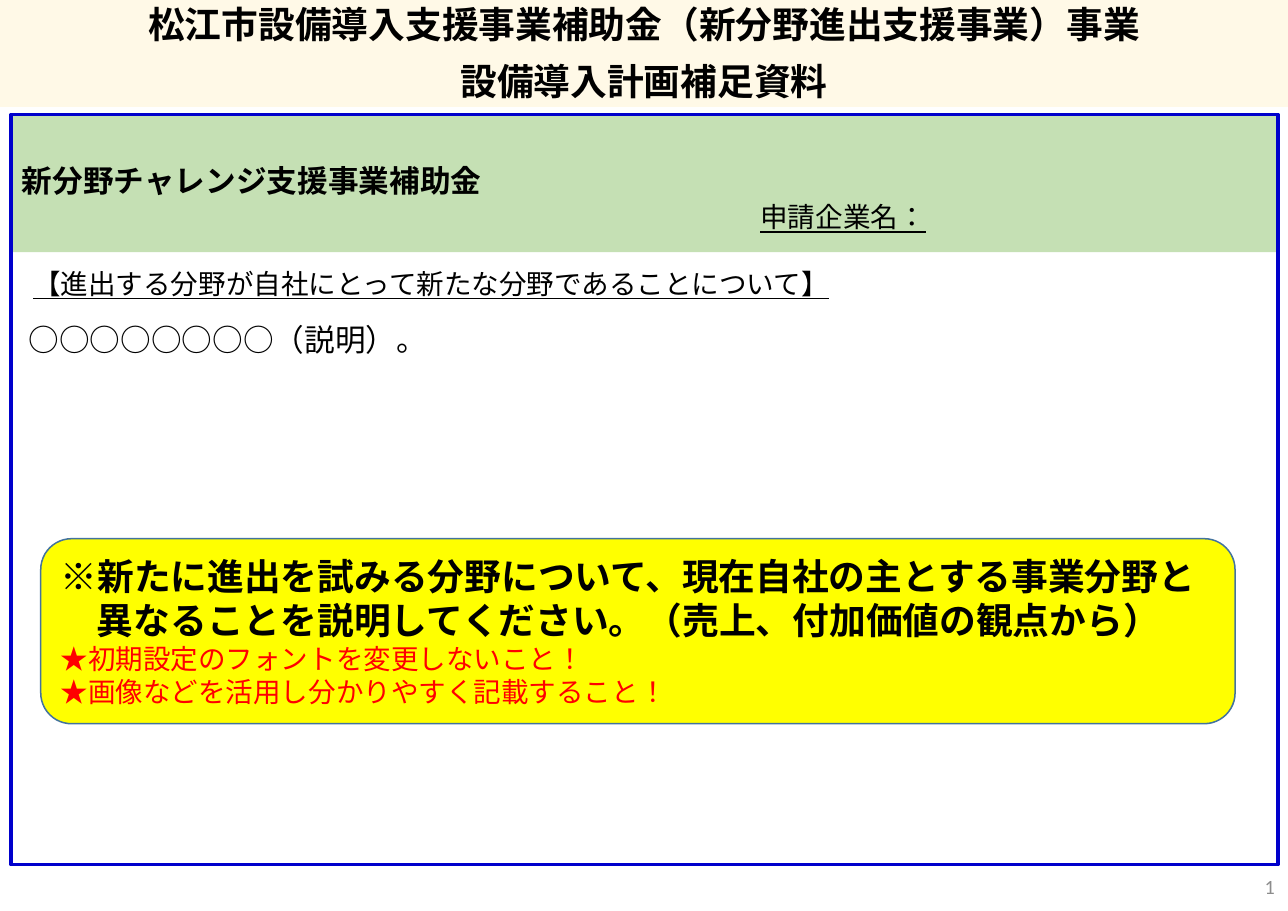
from pptx import Presentation
from pptx.dml.color import RGBColor
from pptx.enum.lang import MSO_LANGUAGE_ID
from pptx.enum.shapes import MSO_SHAPE
from pptx.enum.text import MSO_ANCHOR, PP_ALIGN
from pptx.oxml.ns import qn
from pptx.util import Inches, Pt

RECT, ROUNDED = MSO_SHAPE.RECTANGLE, MSO_SHAPE.ROUNDED_RECTANGLE
TOP, MIDDLE = MSO_ANCHOR.TOP, MSO_ANCHOR.MIDDLE
LEFT, CENTER, RIGHT = PP_ALIGN.LEFT, PP_ALIGN.CENTER, PP_ALIGN.RIGHT
JAPANESE = MSO_LANGUAGE_ID.JAPANESE

BLACK = RGBColor(0x00, 0x00, 0x00)
RED = RGBColor(0xFF, 0x00, 0x00)
GRAY = RGBColor(0x8C, 0x8C, 0x8C)
CREAM = RGBColor(0xFF, 0xF9, 0xE7)
GREEN = RGBColor(0xC5, 0xE0, 0xB4)
YELLOW = RGBColor(0xFF, 0xFF, 0x00)
FRAME_BLUE = RGBColor(0x00, 0x00, 0xCC)
NOTE_BLUE = RGBColor(0x43, 0x73, 0x9E)

GOTHIC, LATIN, BAND_FONT = "Noto Sans CJK JP", "Calibri", "Arial"
TITLE_SIZE, BODY_SIZE, LABEL_SIZE, NUMBER_SIZE = 24, 20, 18, 13.2
PAGE_WIDTH, PAGE_HEIGHT = 11.69, 8.27
FRAME_LEFT, FRAME_WIDTH = 0.1, 11.5
LABEL_HEIGHT = 0.4
ONE_CHARACTER = round(TITLE_SIZE / 72, 2)

TITLE_LINES = [
    "松江市設備導入支援事業補助金（新分野進出支援事業）事業",
    "設備導入計画補足資料",
]
# Each guidance line with its indent in characters
REQUEST_LINES = [
    ("※新たに進出を試みる分野について、現在自社の主とする事業分野と", 0),
    ("異なることを説明してください。（売上、付加価値の観点から）", 1),
]
REMINDERS = [
    "★初期設定のフォントを変更しないこと！",
    "★画像などを活用し分かりやすく記載すること！",
]
UNDERLINED_LABELS = [
    ("【進出する分野が自社にとって新たな分野であることについて】", 0.1, 2.37, 7.52),
    ("申請企業名：", 6.78, 1.77, 1.72),
]


def write(paragraph, text, size=LABEL_SIZE, font=GOTHIC, color=BLACK, bold=False,
          underline=False, align=LEFT, line_spacing=None, before=0, indent=0):
    paragraph.alignment = align
    paragraph.line_spacing = line_spacing
    paragraph.space_before = Pt(before)
    paragraph._p.get_or_add_pPr().set("marL", str(Inches(indent)))
    run = paragraph.add_run()
    run.text = text
    run.font.name = font
    run.font.size = Pt(size)
    run.font.bold = bold
    run.font.underline = underline
    run.font.color.rgb = color
    run.font.language_id = JAPANESE
    properties = run._r.get_or_add_rPr()
    east_asian = properties.makeelement(qn("a:ea"), {"typeface": GOTHIC})
    properties.find(qn("a:latin")).addnext(east_asian)


class SlideBuilder:
    def __init__(self, slide):
        self.shapes = slide.shapes

    def panel(self, box, kind=RECT, fill=None, line=None, line_width=1):
        panel = self.shapes.add_shape(kind, *map(Inches, box))
        panel.shadow.inherit = False
        if fill is None:
            panel.fill.background()
        else:
            panel.fill.solid()
            panel.fill.fore_color.rgb = fill
        if line is None:
            panel.line.fill.background()
        else:
            panel.line.color.rgb = line
            panel.line.width = Pt(line_width)
        return panel

    def lines(self, shape, entries, insets=(0.1, 0.05, 0.1, 0.05),
              anchor=MIDDLE, wrap=True, **shared):
        """Fill a shape with (text, own format) entries that share a format."""
        frame = shape.text_frame
        frame.word_wrap = wrap
        frame.vertical_anchor = anchor
        (frame.margin_left, frame.margin_top,
         frame.margin_right, frame.margin_bottom) = map(Inches, insets)
        for index, (text, own) in enumerate(entries):
            paragraph = frame.add_paragraph() if index else frame.paragraphs[0]
            write(paragraph, text, **{**shared, **own})

    def label(self, box, text, **style):
        self.lines(self.shapes.add_textbox(*map(Inches, box)), [(text, {})], **style)


def add_main_frame(page):
    program_band = page.panel((FRAME_LEFT, 1.03, FRAME_WIDTH, 1.26), fill=GREEN)
    page.lines(program_band, [("新分野チャレンジ支援事業補助金", {})],
               insets=(0.1, 0, 0.1, 0), size=BODY_SIZE, font=BAND_FONT,
               bold=True, line_spacing=0.9)
    page.label((FRAME_LEFT, 2.86, 11.36, 0.82), "○○○○○○○○（説明）。",
               insets=(0.16, 0.05, 0, 0.05), anchor=TOP, size=BODY_SIZE, before=11)
    page.panel((FRAME_LEFT, 1.04, FRAME_WIDTH, 6.81),
               line=FRAME_BLUE, line_width=2.25)
    for text, left, top, width in UNDERLINED_LABELS:
        page.label((left, top, width, LABEL_HEIGHT), text,
                   wrap=False, align=RIGHT, underline=True)


def add_title(page):
    title_band = page.panel((0, 0, PAGE_WIDTH, 0.97), fill=CREAM)
    page.lines(title_band, [(text, {}) for text in TITLE_LINES],
               insets=(0.1, 0.08, 0.1, 0.05), size=TITLE_SIZE, bold=True,
               align=CENTER, line_spacing=0.9, before=11)


def add_guidance(page):
    guidance = page.panel((0.37, 4.89, 10.84, 1.68), ROUNDED, YELLOW, NOTE_BLUE)
    requests = [
        (text, dict(size=TITLE_SIZE, bold=True, indent=characters * ONE_CHARACTER))
        for text, characters in REQUEST_LINES
    ]
    reminders = [(text, dict(color=RED)) for text in REMINDERS]
    page.lines(guidance, requests + reminders, font=LATIN)


def main():
    deck = Presentation()
    deck.slide_width, deck.slide_height = Inches(PAGE_WIDTH), Inches(PAGE_HEIGHT)
    page = SlideBuilder(deck.slides.add_slide(deck.slide_layouts[6]))
    add_main_frame(page)
    add_title(page)
    page.label((11.37, 7.88, 0.3, 0.34), "1", wrap=False, align=RIGHT,
               size=NUMBER_SIZE, font=LATIN, color=GRAY)
    add_guidance(page)
    deck.save("out.pptx")


if __name__ == "__main__":
    main()
